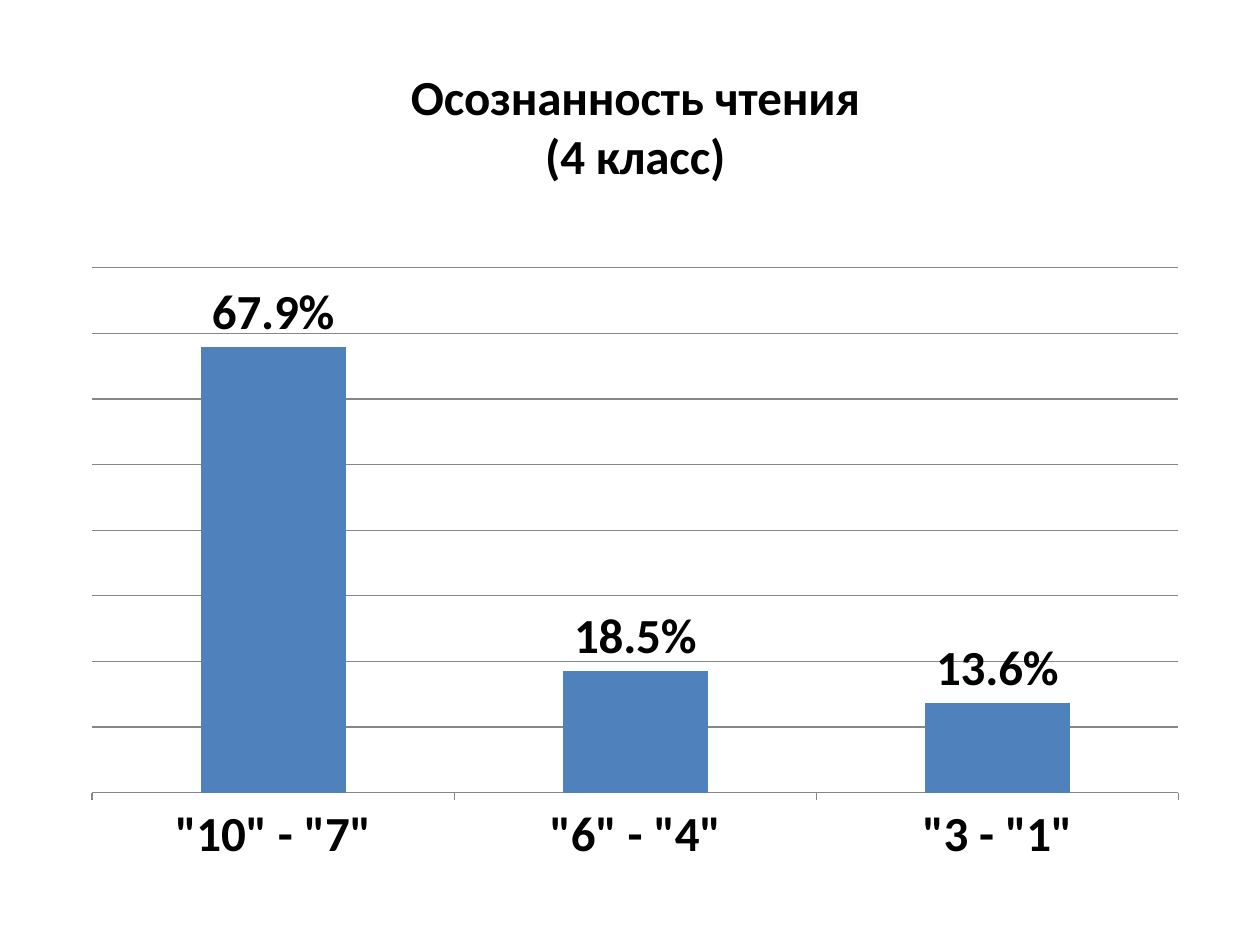
import pptx
import pptx.chart.data
import pptx.dml.color
import pptx.enum.chart
import pptx.oxml
import pptx.oxml.ns
import pptx.util
from pptx.util import Cm

BLACK, BLUE, GREY = "000000", "4F81BD", "878787"
SCORES = {'"10" - "7"': 0.679, '"6" - "4"': 0.185, '"3 - "1"': 0.136}


def paint(color, code):
    color.rgb = pptx.dml.color.RGBColor.from_string(code)


def style(font, size, bold=False):
    font.name = "Calibri"
    font.size = pptx.util.Pt(size)
    font.bold = bold
    paint(font.color, BLACK)


def rule(line):
    paint(line.color, GREY)
    line.width = pptx.util.Pt(0.75)


def add_title(chart, lines):
    chart.has_title = True
    frame = chart.chart_title.text_frame
    frame.text = "\n".join(lines)
    for para in frame.paragraphs:
        for run in para.runs:
            style(run.font, 28, True)
    chart.chart_title.include_in_layout = False


def place_plot(chart, **parts):
    """Fix the inner plot area, in fractions of the chart."""
    area = chart._chartSpace.chart.plotArea
    for old in area.findall(pptx.oxml.ns.qn("c:layout")):
        area.remove(old)
    sizes = "".join(f'<c:{k} val="{v}"/>' for k, v in parts.items())
    area.insert(0, pptx.oxml.parse_xml(
        f'<c:layout {pptx.oxml.ns.nsdecls("c")}><c:manualLayout>'
        '<c:layoutTarget val="inner"/><c:xMode val="edge"/>'
        f'<c:yMode val="edge"/>{sizes}</c:manualLayout></c:layout>'))


def format_axes(chart):
    tick = pptx.enum.chart.XL_TICK_MARK
    groups = chart.category_axis
    groups.major_tick_mark = tick.OUTSIDE
    groups.minor_tick_mark = tick.NONE
    style(groups.tick_labels.font, 28, True)
    rule(groups.format.line)
    share = chart.value_axis
    share.minimum_scale, share.maximum_scale = 0, 0.8
    share.major_unit = 0.1
    share.has_major_gridlines = True
    rule(share.major_gridlines.format.line)
    share.visible = False


def format_bars(chart):
    plot = chart.plots[0]
    plot.gap_width = 150
    plot.vary_by_categories = False
    bars = plot.series[0]
    bars.format.fill.solid()
    paint(bars.format.fill.fore_color, BLUE)
    labels = bars.data_labels
    labels.show_value = True
    labels.number_format = "0.0%"
    labels.number_format_is_linked = False
    labels.position = pptx.enum.chart.XL_LABEL_POSITION.OUTSIDE_END
    style(labels.font, 28, True)


def add_chart(slide):
    data = pptx.chart.data.CategoryChartData(number_format="0.0%")
    data.categories = list(SCORES)
    data.add_series("Series 1", list(SCORES.values()))
    chart = slide.shapes.add_chart(
        pptx.enum.chart.XL_CHART_TYPE.COLUMN_CLUSTERED,
        Cm(1.4), Cm(0.79), Cm(22.81), Cm(17.07), data).chart
    chart.has_legend = False
    style(chart.font, 10)
    add_title(chart, ["Осознанность чтения", "(4 класс)"])
    place_plot(chart, x=0.02, y=0.27, w=0.96, h=0.62)
    format_axes(chart)
    format_bars(chart)


def main():
    deck = pptx.Presentation()
    deck.slide_width, deck.slide_height = Cm(25.4), Cm(19.05)
    blank = deck.slide_layouts[6]
    add_chart(deck.slides.add_slide(blank))
    deck.save("out.pptx")


if __name__ == "__main__":
    main()
